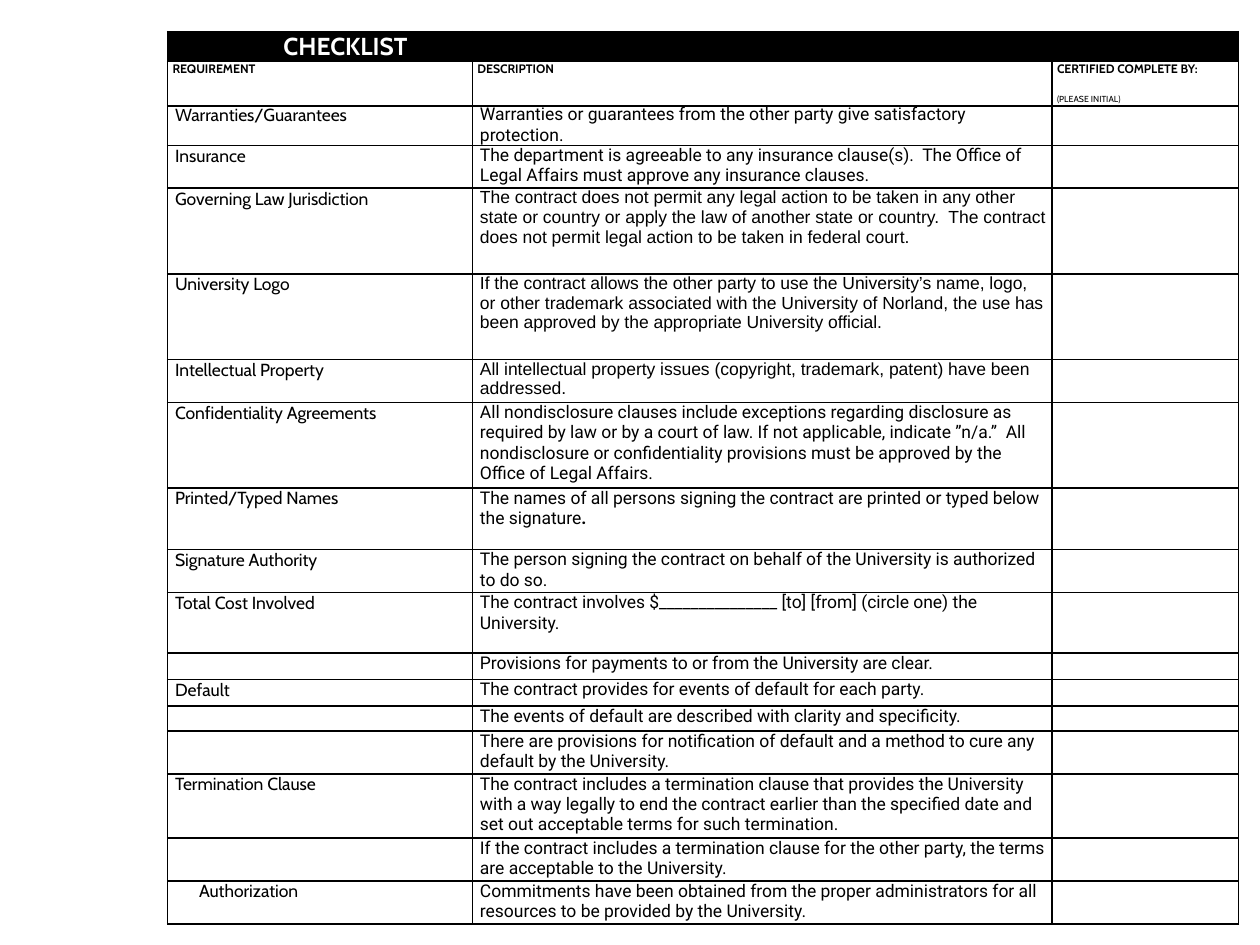
from lxml.etree import SubElement
from pptx import Presentation
from pptx.dml.color import RGBColor
from pptx.oxml.ns import qn
from pptx.util import Inches, Pt

BLACK = RGBColor(0, 0, 0)
WHITE = RGBColor(255, 255, 255)
HEAD, BODY, ALT = "Cabin", "Roboto", "Arial"
LEFT = 1.33
COLS = [2.42, 4.6, 1.48]

CHECKLIST = [
    (0.32, "Warranties/Guarantees", BODY,
     "Warranties or guarantees from the other party give satisfactory protection."),
    (0.34, "Insurance", BODY,
     "The department is agreeable to any insurance clause(s).  The Office of Legal Affairs "
     "must approve any insurance clauses."),
    (0.68, "Governing Law Jurisdiction", ALT,
     "The contract does not permit any legal action to be taken in any other state or country "
     "or apply the law of another state or country.  The contract does not permit legal action "
     "to be taken in federal court."),
    (0.68, "University Logo", ALT,
     "If the contract allows the other party to use the University’s name, logo, or other "
     "trademark associated with the University of Norland, the use has been approved by the "
     "appropriate University official."),
    (0.34, "Intellectual Property", ALT,
     "All intellectual property issues (copyright, trademark, patent) have been addressed."),
    (0.68, "Confidentiality Agreements", BODY,
     "All nondisclosure clauses include exceptions regarding disclosure as required by law or "
     "by a court of law. If not applicable, indicate ”n/a.”  All nondisclosure or "
     "confidentiality provisions must be approved by the Office of Legal Affairs."),
    (0.49, "Printed/Typed Names", BODY,
     "The names of all persons signing the contract are printed or typed below the signature"),
    (0.34, "Signature Authority", BODY,
     "The person signing the contract on behalf of the University is authorized to do so."),
    (0.48, "Total Cost Involved", BODY,
     "The contract involves $_______________ [to] [from] (circle one) the University."),
    (0.21, "", BODY, "Provisions for payments to or from the University are clear."),
    (0.21, "Default", BODY, "The contract provides for events of default for each party."),
    (0.2, "", BODY, "The events of default are described with clarity and specificity."),
    (0.34, "", BODY,
     "There are provisions for notification of default and a method to cure any default by "
     "the University."),
    (0.51, "Termination Clause", BODY,
     "The contract includes a termination clause that provides the University with a way "
     "legally to end the contract earlier than the specified date and set out acceptable terms "
     "for such termination."),
    (0.34, "", BODY,
     "If the contract includes a termination clause for the other party, the terms are "
     "acceptable to the University."),
    (0.34, "Authorization", BODY,
     "Commitments have been obtained from the proper administrators for all resources to be "
     "provided by the University."),
]


class Deck:
    """Holds the presentation, its current slide and the table style."""

    def __init__(self):
        self.prs = Presentation()
        self.prs.slide_width, self.prs.slide_height = Inches(10), Inches(7.5)
        self.s = self.prs.slides.add_slide(self.prs.slide_layouts[6])

    def table(self, top, heights, left_margin, right_margin):
        frame = self.s.shapes.add_table(len(heights), len(COLS), Inches(LEFT), Inches(top),
                                        Inches(sum(COLS)), Inches(sum(heights)))
        tbl = frame.table
        tbl.first_row = tbl.horz_banding = False
        for col, width in zip(tbl.columns, COLS):
            col.width = Inches(width)
        for row, height in zip(tbl.rows, heights):
            row.height = Inches(height)
        for cell in tbl.iter_cells():
            cell.margin_left, cell.margin_right = Inches(left_margin), Inches(right_margin)
            cell.margin_top = cell.margin_bottom = 0
            self.borders(cell)
            cell.fill.solid()
            cell.fill.fore_color.rgb = WHITE
            end = SubElement(cell.text_frame.paragraphs[0]._p, qn("a:endParaRPr"))
            end.set("sz", "1000")
        return tbl

    def borders(self, cell):
        pr = cell._tc.get_or_add_tcPr()
        for side in ("a:lnL", "a:lnR", "a:lnT", "a:lnB"):
            ln = SubElement(pr, qn(side), w=str(Pt(1)))
            fill = SubElement(ln, qn("a:solidFill"))
            SubElement(fill, qn("a:srgbClr"), val=str(BLACK))

    def text(self, p, text, font=HEAD, size=10, bold=False, color=BLACK, indent=0):
        r = p.add_run()
        r.text = text
        r.font.name, r.font.size, r.font.bold = font, Pt(size), bold
        r.font.color.rgb = color
        if indent:
            p._p.get_or_add_pPr().set("marL", str(Inches(indent)))


def main():
    deck = Deck()

    body = deck.table(0.83, [item[0] for item in CHECKLIST], 0.06, 0.05)
    for i, (_, name, font, description) in enumerate(CHECKLIST):
        if name:
            deck.text(body.cell(i, 0).text_frame.paragraphs[0], name,
                      indent=0.19 if name == "Authorization" else 0)
        p = body.cell(i, 1).text_frame.paragraphs[0]
        deck.text(p, description, font)
        if name == "Printed/Typed Names":
            deck.text(p, ".", font, bold=True)

    header = deck.table(0.25, [0.24, 0.35], 0.04, 0.04)
    for c in range(len(COLS)):
        header.cell(0, c).fill.fore_color.rgb = BLACK
    deck.text(header.cell(0, 0).text_frame.paragraphs[0], "CHECKLIST", size=14, bold=True,
              color=WHITE, indent=0.88)
    for c, label in enumerate(["REQUIREMENT", "DESCRIPTION", "CERTIFIED COMPLETE BY:"]):
        tf = header.cell(1, c).text_frame
        deck.text(tf.paragraphs[0], label, size=7, bold=True)
    tf.paragraphs[0].space_after = Pt(10)
    deck.text(tf.add_paragraph(), "(PLEASE INITIAL)", size=5)

    deck.prs.save("out.pptx")


if __name__ == "__main__":
    main()
